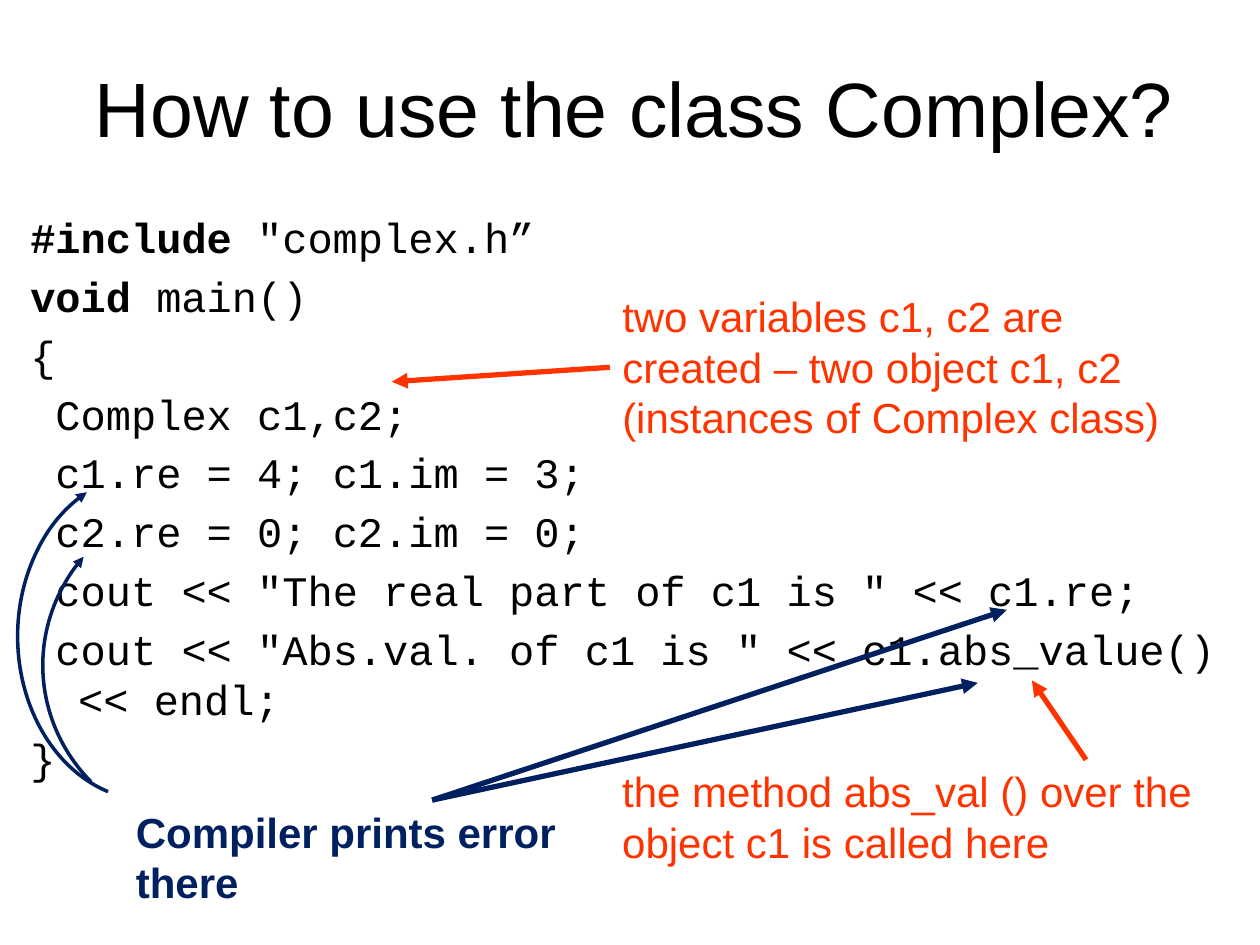
from lxml import etree
from pptx import Presentation
from pptx.dml.color import RGBColor
from pptx.enum.shapes import MSO_CONNECTOR, MSO_SHAPE
from pptx.enum.text import MSO_ANCHOR, MSO_AUTO_SIZE, PP_ALIGN
from pptx.oxml.ns import qn
from pptx.util import Emu, Pt

STRAIGHT = MSO_CONNECTOR.STRAIGHT
ARC = MSO_SHAPE.ARC
MIDDLE = MSO_ANCHOR.MIDDLE
CENTER = PP_ALIGN.CENTER
NO_AUTOFIT = MSO_AUTO_SIZE.NONE
GROW = MSO_AUTO_SIZE.SHAPE_TO_FIT_TEXT
LEFT_SIDE = 1

EMU_PER_PX = 9144  # 100 px to the inch
BLACK, ORANGE, NAVY = "000000", "FF3300", "002060"

# Each line of code: a bold keyword, then plain text.
CODE = [
    ("#include", ' "complex.h”'),
    ("void", " main()"),
    ("", "{"),
    ("", " Complex c1,c2;"),
    ("", " c1.re = 4; c1.im = 3;"),
    ("", " c2.re = 0; c2.im = 0;"),
    ("", ' cout << "The real part of c1 is " << c1.re;'),
    ("", ' cout << "Abs.val. of c1 is " << c1.abs_value() << endl;'),
    ("", "}"),
]


def px(value):
    return Emu(value * EMU_PER_PX)


def color(hex_string):
    return RGBColor.from_string(hex_string)


class SlideBuilder:
    text_font = "Arial"
    code_font = "Courier New"
    title_size = 44
    text_size = 24

    def __init__(self, slide):
        self.slide = slide

    def place(self, shape, box):
        shape.left, shape.top, shape.width, shape.height = map(px, box)

    def add_run(self, paragraph, text, size, font, ink=BLACK, bold=False):
        run = paragraph.add_run()
        run.text = text
        run.font.size = Pt(size)
        run.font.name = font
        run.font.bold = bold
        run.font.color.rgb = color(ink)

    def title(self, box, text):
        shape = self.slide.shapes.title
        self.place(shape, box)
        frame = shape.text_frame
        frame.vertical_anchor = MIDDLE
        frame.auto_size = NO_AUTOFIT
        paragraph = frame.paragraphs[0]
        paragraph.alignment = CENTER
        self.add_run(paragraph, text, self.title_size, self.text_font)

    def code(self, box, lines):
        shape = self.slide.placeholders[1]
        self.place(shape, box)
        frame = shape.text_frame
        frame.auto_size = NO_AUTOFIT
        for index, (keyword, rest) in enumerate(lines):
            paragraph = frame.add_paragraph() if index else frame.paragraphs[0]
            paragraph.space_before = Pt(self.text_size * 0.2)
            self.hang(paragraph, 38)
            if keyword:
                self.add_run(paragraph, keyword, self.text_size, self.code_font, bold=True)
            self.add_run(paragraph, rest, self.text_size, self.code_font)

    def hang(self, paragraph, indent):
        """Give the paragraph a hanging indent without a bullet."""
        properties = paragraph._p.get_or_add_pPr()
        properties.set("marL", str(px(indent)))
        properties.set("indent", str(px(-indent)))
        etree.SubElement(properties, qn("a:buNone"))

    def note(self, box, text, ink, bold=False):
        shape = self.slide.shapes.add_textbox(*map(px, box))
        frame = shape.text_frame
        frame.word_wrap = True
        frame.auto_size = GROW
        self.add_run(frame.paragraphs[0], text, self.text_size, self.text_font, ink, bold)
        return shape

    def arrow_line(self, shape, ink, width):
        """Style the outline and end it with a triangle."""
        shape.line.color.rgb = color(ink)
        shape.line.width = Pt(width)
        outline = shape._element.spPr.find(qn("a:ln"))
        etree.SubElement(outline, qn("a:tailEnd"), type="triangle")

    def arrow(self, start, end, ink, source=None):
        connector = self.slide.shapes.add_connector(STRAIGHT, *map(px, start + end))
        if source is not None:
            connector.begin_connect(source, LEFT_SIDE)
        self.arrow_line(connector, ink, 3)
        etree.SubElement(connector._element.spPr, qn("a:effectLst"))

    def arc(self, box, angles, ink):
        """Draw an arc arrow; angles are clockwise degrees from the right."""
        shape = self.slide.shapes.add_shape(ARC, *map(px, box))
        for index, angle in enumerate(angles):
            shape.adjustments[index] = angle * 0.6
        shape.shadow.inherit = False
        shape.fill.background()
        self.arrow_line(shape, ink, 2)


def main():
    presentation = Presentation()
    presentation.slide_width, presentation.slide_height = px(1000), px(750)
    builder = SlideBuilder(presentation.slides.add_slide(presentation.slide_layouts[1]))

    builder.title((58, 22, 891, 125), "How to use the class Complex?")
    builder.code((14, 163, 974, 414), CODE)

    variables_note = builder.note(
        (484, 226, 488, 131),
        "two variables c1, c2 are created – two object c1, c2 (instances of Complex class)",
        ORANGE,
    )
    builder.arrow((484, 290), (311, 303), ORANGE, variables_note)
    builder.note(
        (484, 603, 504, 91), "the method abs_val () over the object c1 is called here", ORANGE
    )
    builder.arrow((862, 603), (819, 540), ORANGE)

    builder.note((98, 635, 354, 91), "Compiler prints error there", NAVY, bold=True)
    builder.arc((14, 375, 210, 260), (105.08, 246.35), NAVY)
    builder.arc((34, 394, 277, 268), (137.27, 219.07), NAVY)
    for target in ((776, 542), (799, 484)):
        builder.arrow((343, 635), target, NAVY)

    presentation.save("out.pptx")


if __name__ == "__main__":
    main()
